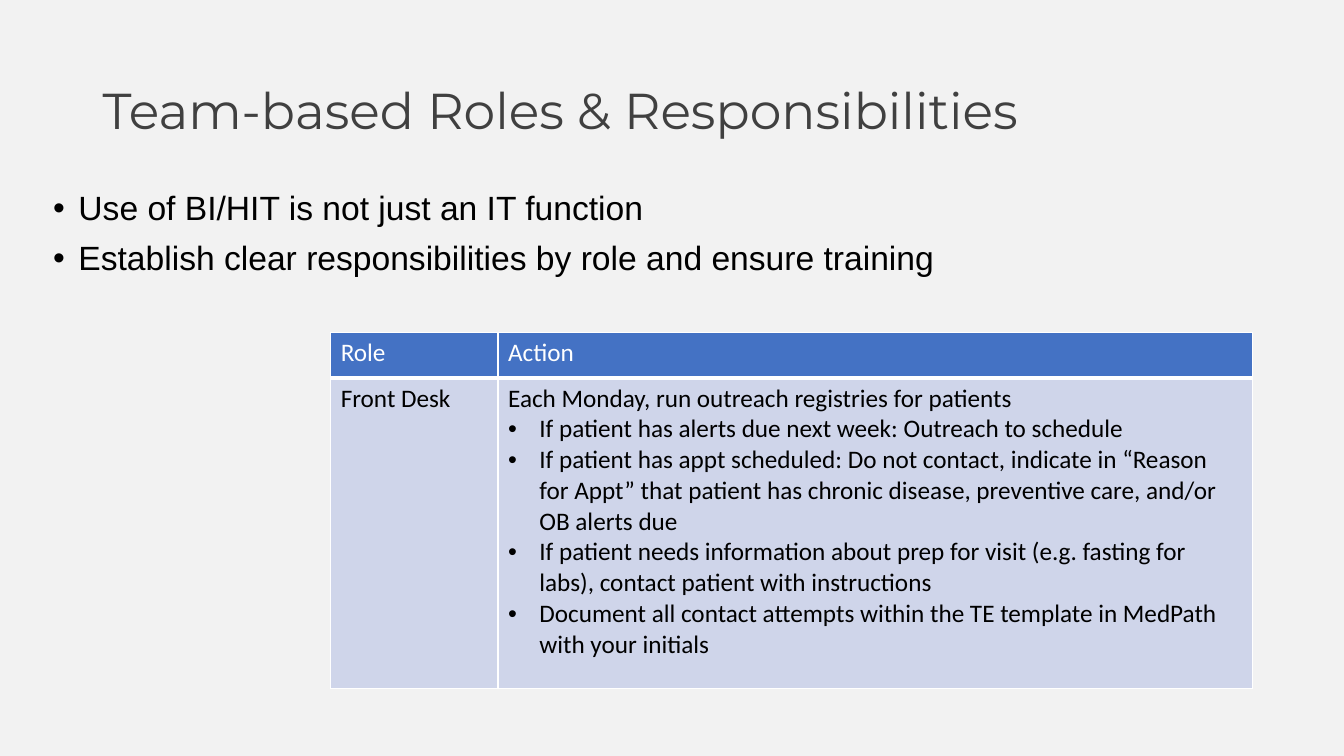
from pptx import Presentation
from pptx.dml.color import RGBColor
from pptx.enum.text import MSO_ANCHOR
from pptx.oxml import parse_xml
from pptx.oxml.ns import nsdecls
from pptx.util import Inches, Pt

TITLE = "Team-based Roles & Responsibilities"
POINTS = [
    "Use of BI/HIT is not just an IT function",
    "Establish clear responsibilities by role and ensure training",
]
HEADER = ["Role", "Action"]
ROLE = "Front Desk"
ACTION = "Each Monday, run outreach registries for patients"
STEPS = [
    "If patient has alerts due next week: Outreach to schedule",
    "If patient has appt scheduled: Do not contact, indicate in “Reason for Appt” "
    "that patient has chronic disease, preventive care, and/or OB alerts due",
    "If patient needs information about prep for visit (e.g. fasting for labs), "
    "contact patient with instructions",
    "Document all contact attempts within the TE template in MedPath with your initials",
]

PAPER = RGBColor(0xF2, 0xF2, 0xF2)
CHARCOAL = RGBColor(0x40, 0x40, 0x40)
BLACK = RGBColor(0, 0, 0)
WHITE = RGBColor(0xFF, 0xFF, 0xFF)
BLUE = RGBColor(0x44, 0x72, 0xC4)
PALE = RGBColor(0xCF, 0xD5, 0xEA)

TITLE_BOX = (0.92, 0.4, 11.5, 1.45)
POINTS_BOX = (0.43, 1.85, 11.5, 4.76)
TABLE_AT = (3.28, 3.3)
COLS = (1.66, 7.48)
ROWS = (0.45, 3.08)


def add_box(s, box):
    tf = s.shapes.add_textbox(*map(Inches, box)).text_frame
    tf.word_wrap = True
    return tf


def write(tf, texts, size, font, color, indents=None, spacing=None, before=0):
    for i, text in enumerate(texts):
        p = tf.paragraphs[0] if i == 0 else tf.add_paragraph()
        p.space_before = Pt(before)
        if spacing:
            p.line_spacing = spacing
        if indents and indents[i]:
            pPr = p._p.get_or_add_pPr()
            pPr.set("marL", str(Inches(indents[i])))
            pPr.set("indent", str(-Inches(indents[i])))
            pPr.append(parse_xml(f'<a:buFont {nsdecls("a")} typeface="Arial"/>'))
            pPr.append(parse_xml(f'<a:buChar {nsdecls("a")} char="•"/>'))
        r = p.add_run()
        r.text = text
        r.font.size = Pt(size)
        r.font.name = font
        r.font.bold = False
        r.font.color.rgb = color


def add_borders(cell, bottom):
    tcPr = cell._tc.get_or_add_tcPr()
    widths = {"lnL": 1, "lnR": 1, "lnT": 1, "lnB": bottom}
    for i, (side, width) in enumerate(widths.items()):
        tcPr.insert(i, parse_xml(
            f'<a:{side} {nsdecls("a")} w="{Pt(width)}"><a:solidFill>'
            f'<a:srgbClr val="{WHITE}"/></a:solidFill></a:{side}>'))


def add_roles_table(s):
    size = (sum(COLS), sum(ROWS))
    table = s.shapes.add_table(len(ROWS), len(COLS), *map(Inches, TABLE_AT + size)).table
    for col, width in zip(table.columns, COLS):
        col.width = Inches(width)
    cells = [[[text] for text in HEADER], [[ROLE], [ACTION] + STEPS]]
    for i, row in enumerate(cells):
        table.rows[i].height = Inches(ROWS[i])
        fill, color, bottom = (PALE, BLACK, 1) if i else (BLUE, WHITE, 3)
        for j, texts in enumerate(row):
            cell = table.cell(i, j)
            cell.fill.solid()
            cell.fill.fore_color.rgb = fill
            add_borders(cell, bottom)
            indents = [0] + [0.31] * (len(texts) - 1)
            write(cell.text_frame, texts, 18, "Calibri", color, indents)


def main():
    prs = Presentation()
    prs.slide_width, prs.slide_height = Inches(13.33), Inches(7.5)
    s = prs.slides.add_slide(prs.slide_layouts[6])
    s.background.fill.solid()
    s.background.fill.fore_color.rgb = PAPER

    tf = add_box(s, TITLE_BOX)
    tf.vertical_anchor = MSO_ANCHOR.MIDDLE
    write(tf, [TITLE], 36, "Montserrat", CHARCOAL, spacing=0.9)

    tf = add_box(s, POINTS_BOX)
    write(tf, POINTS, 24, "Arial", BLACK, [0.25] * len(POINTS), 0.9, 10)

    add_roles_table(s)
    prs.save("out.pptx")


if __name__ == "__main__":
    main()
